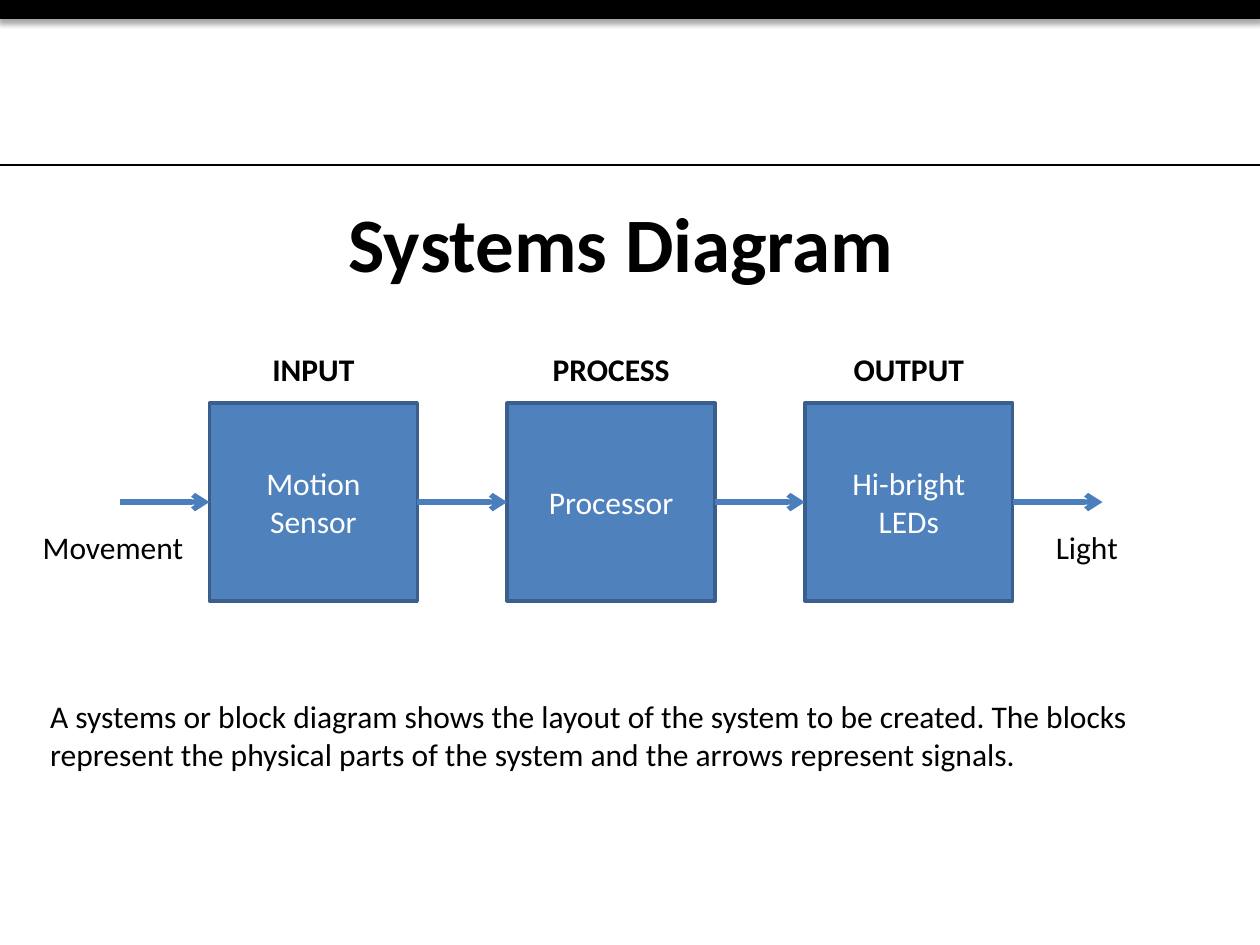
from lxml import etree
from pptx import Presentation
from pptx.dml.color import RGBColor
from pptx.enum.shapes import MSO_CONNECTOR, MSO_SHAPE
from pptx.enum.text import MSO_ANCHOR, PP_ALIGN
from pptx.oxml import parse_xml
from pptx.oxml.ns import nsdecls, qn
from pptx.util import Pt

RECTANGLE = MSO_SHAPE.RECTANGLE
STRAIGHT = MSO_CONNECTOR.STRAIGHT
TOP, MIDDLE = MSO_ANCHOR.TOP, MSO_ANCHOR.MIDDLE
LEFT, CENTER = PP_ALIGN.LEFT, PP_ALIGN.CENTER
COLORS = {"ink": "000000", "block": "4F81BD", "edge": "3A5F8C",
          "signal": "4B7EBC", "block_text": "FFFFFF"}
STAGES = [("INPUT", 62.6, ["Motion Sensor"]),
          ("PROCESS", 85, ["Processor"]),
          ("OUTPUT", 96.5, ["Hi-bright", "LEDs"])]
EXPLANATION = ("A systems or block diagram shows the layout of the system to be created. "
               "The blocks represent the physical parts of the system and the arrows "
               "represent signals.")


def color(name):
    """Return the named palette colour."""
    return RGBColor.from_string(COLORS[name])


def write(shape, lines, ink="ink", size=18, bold=False, align=LEFT, anchor=TOP):
    """Fill a shape with one formatted paragraph per line."""
    frame = shape.text_frame
    frame.word_wrap = True
    frame.vertical_anchor = anchor
    frame.text = "\n".join(lines)
    font_values = {"name": "Calibri", "size": Pt(size), "bold": bold}
    for paragraph in frame.paragraphs:
        paragraph.alignment = align
        for attribute, value in font_values.items():
            setattr(paragraph.font, attribute, value)
        paragraph.font.color.rgb = color(ink)


def add_text(slide, box, text, **style):
    """Add a text box at a box given in points."""
    write(slide.shapes.add_textbox(*map(Pt, box)), [text], **style)


def add_rectangle(slide, box, fill, edge, weight):
    """Add a filled, outlined rectangle without a theme shadow."""
    rectangle = slide.shapes.add_shape(RECTANGLE, *map(Pt, box))
    rectangle.shadow.inherit = False
    rectangle.fill.solid()
    rectangle.fill.fore_color.rgb = color(fill)
    rectangle.line.color.rgb = color(edge)
    rectangle.line.width = Pt(weight)
    return rectangle


def add_line(slide, left, right, y, ink, weight, arrow=False):
    """Add a horizontal line, with an arrowhead at its right end if asked."""
    line = slide.shapes.add_connector(STRAIGHT, Pt(left), Pt(y), Pt(right), Pt(y))
    line.line.color.rgb = color(ink)
    line.line.width = Pt(weight)
    if arrow:
        etree.SubElement(line.line._get_or_add_ln(), qn("a:tailEnd"), type="arrow")
    etree.SubElement(line._element.spPr, qn("a:effectLst"))


def add_header(slide, left, top, width, height):
    """Draw the shadowed top bar and the rule that closes the header."""
    bar = add_rectangle(slide, (left, top, width, 10.8), "ink", "ink", 0.75)
    effects = bar._element.spPr.find(qn("a:effectLst"))
    effects.append(parse_xml(
        f'<a:outerShdw {nsdecls("a")} blurRad="{Pt(3.1)}" dist="{Pt(1.8)}" '
        f'dir="5400000" rotWithShape="0"><a:srgbClr val="{COLORS["ink"]}">'
        '<a:alpha val="35000"/></a:srgbClr></a:outerShdw>'))
    add_line(slide, left, left + width, top + height, "ink", 1.5)


def add_diagram(slide, left, top, width, height):
    """Draw the stages, their headings and the signals between them."""
    block_width, heading_height = 118.8, 33.8
    gap = (width - len(STAGES) * block_width) / (len(STAGES) + 1)
    pitch = block_width + gap
    block_top = top + heading_height
    block_height = height - heading_height
    signal_y = block_top + block_height / 2
    for index, (heading, heading_width, parts) in enumerate(STAGES):
        block_left = left + gap + index * pitch
        block = add_rectangle(slide, (block_left, block_top, block_width, block_height),
                              "block", "edge", 2)
        write(block, parts, ink="block_text", align=CENTER, anchor=MIDDLE)
        heading_left = block_left + (block_width - heading_width) / 2
        add_text(slide, (heading_left, top, heading_width, 29), heading,
                 bold=True, align=CENTER)
    for index in range(len(STAGES) + 1):
        start = left + index * pitch
        add_line(slide, start, start + gap, signal_y, "signal", 3, arrow=True)
    signal_top = signal_y + 11
    add_text(slide, (left - 51.1, signal_top, 96.5, 29), "Movement")
    add_text(slide, (left + width - 33.8, signal_top, 104.4, 29), "Light")


def main():
    """Build and save the systems diagram slide."""
    deck = Presentation()
    deck.slide_width, deck.slide_height = Pt(720), Pt(540)
    slide = deck.slides.add_slide(deck.slide_layouts[6])
    add_header(slide, -0.5, 0, 721, 94.3)
    add_text(slide, (31, 103, 648, 70.6), "Systems Diagram",
             size=44, bold=True, align=CENTER, anchor=MIDDLE)
    add_diagram(slide, 68.4, 196.6, 561.6, 146.8)
    add_text(slide, (21.6, 394.6, 671.8, 51), EXPLANATION)
    deck.save("out.pptx")


if __name__ == "__main__":
    main()
